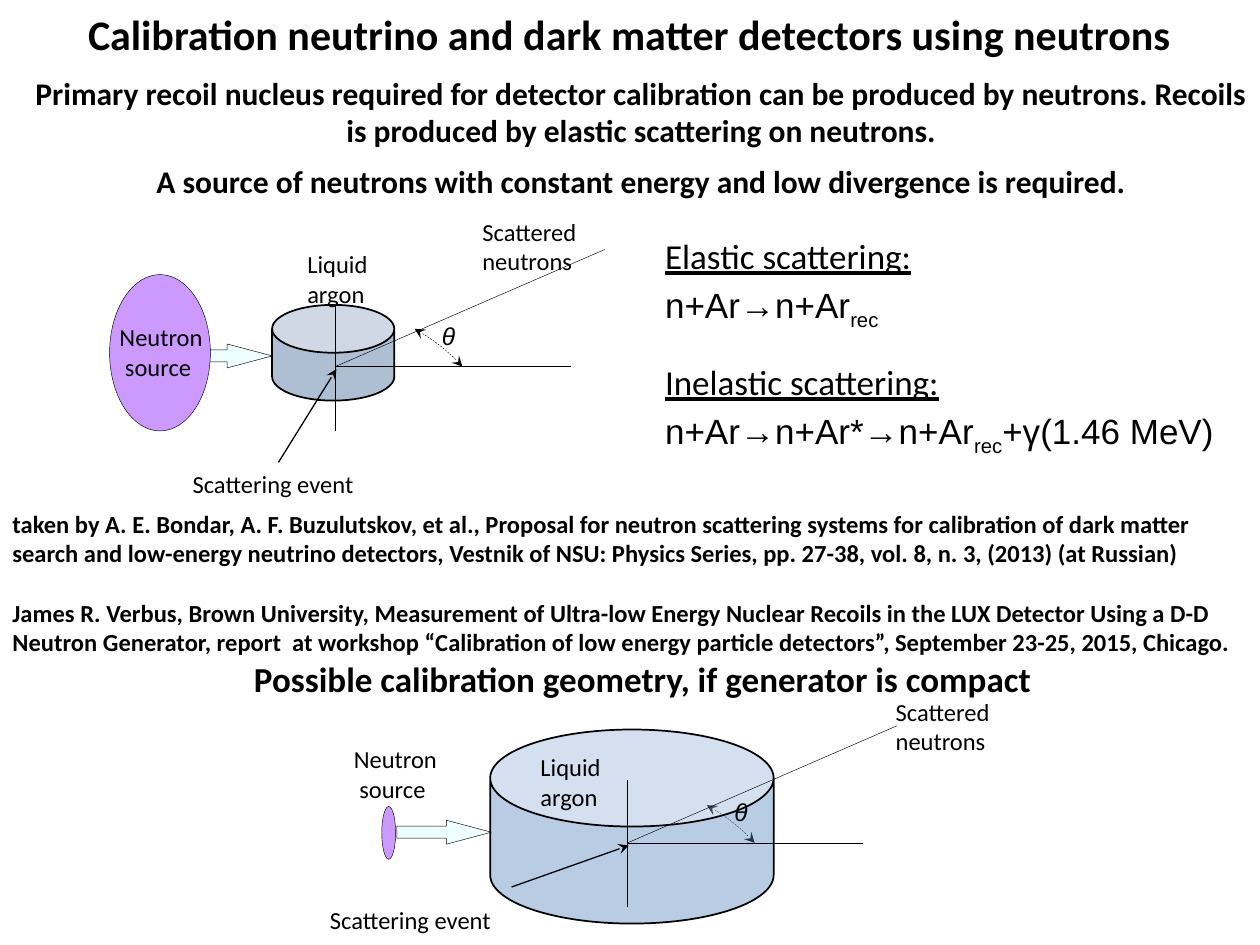
"""Build the slide on calibrating neutrino and dark matter detectors with neutrons."""
from dataclasses import dataclass

import pptx
import pptx.dml.color
import pptx.enum.dml
import pptx.enum.shapes
import pptx.enum.text
import pptx.oxml
import pptx.oxml.ns
import pptx.util

Inches = pptx.util.Inches
Pt = pptx.util.Pt
Shapes = pptx.enum.shapes.MSO_SHAPE
Align = pptx.enum.text.PP_ALIGN
Anchor = pptx.enum.text.MSO_ANCHOR
Rect = tuple[float, float, float, float]
Point = tuple[float, float]


@dataclass
class Span:
    text: str
    size: float = 14
    font: str = "Calibri"
    bold: bool = False
    italic: bool = False
    underline: bool = False
    subscript: bool = False


@dataclass
class Para:
    spans: list[Span]
    before: float = 0
    align: Align = Align.LEFT


@dataclass
class Label:
    lines: tuple[str, ...]
    rect: Rect


@dataclass
class Setup:
    can: Rect
    can_color: str
    beam: Rect
    source: Rect
    event: Point
    pointer_start: Point
    labels: list[Label]


SETUPS = [
    Setup((2.16, 2.42, 0.97, 0.76), "376092", (0.97, 2.73, 1.19, 0.19),
          (0.87, 2.18, 0.8, 1.24), (2.66, 2.91), (2.21, 3.67),
          [Label(("Neutron", " source"), (0.85, 2.51, 0.86, 0.54)),
           Label(("Liquid", "argon"), (2.34, 1.93, 0.68, 0.54)),
           Label(("Scattering event",), (1.43, 3.67, 1.49, 0.32)),
           Label(("Scattered", "neutrons"), (3.73, 1.67, 0.95, 0.54))]),
    Setup((3.89, 5.79, 2.25, 1.54), "4F81BD", (3.15, 6.51, 0.75, 0.19),
          (3.03, 6.4, 0.11, 0.42), (4.98, 6.69), (4.06, 7.04),
          [Label(("Neutron", " source"), (2.71, 5.86, 0.87, 0.57)),
           Label(("Liquid", "argon"), (4.19, 5.92, 0.69, 0.57)),
           Label(("Scattering event",), (2.52, 7.13, 1.49, 0.32)),
           Label(("Scattered", "neutrons"), (7.01, 5.48, 0.95, 0.54))]),
]

CITATIONS = [
    "taken by A. E. Bondar, A. F. Buzulutskov, et al., Proposal for neutron scattering systems "
    "for calibration of dark matter search and low-energy neutrino detectors, Vestnik of NSU: "
    "Physics Series, pp. 27-38, vol. 8, n. 3, (2013) (at Russian)",
    "James R. Verbus, Brown University, Measurement of Ultra-low Energy Nuclear Recoils in the "
    "LUX Detector Using a D-D Neutron Generator, report  at workshop “Calibration of low energy "
    "particle detectors”, September 23-25, 2015, Chicago.",
]

REQUIREMENTS = [
    "Primary recoil nucleus required for detector calibration can be produced by neutrons. "
    "Recoils is produced by elastic scattering on neutrons.",
    "A source of neutrons with constant energy and low divergence is required.",
]


def color(code: str) -> pptx.dml.color.RGBColor:
    return pptx.dml.color.RGBColor.from_string(code)


def lengths(rect: Rect) -> list[pptx.util.Length]:
    return [Inches(value) for value in rect]


def add_text(page, rect: Rect, paras: list[Para], wrap: bool = True, anchor=Anchor.TOP) -> None:
    frame = page.shapes.add_textbox(*lengths(rect)).text_frame
    frame.word_wrap = wrap
    frame.auto_size = pptx.enum.text.MSO_AUTO_SIZE.SHAPE_TO_FIT_TEXT
    frame.vertical_anchor = anchor
    for index, para in enumerate(paras):
        paragraph = frame.add_paragraph() if index else frame.paragraphs[0]
        paragraph.alignment = para.align
        paragraph.space_before = Pt(para.before)
        for span in para.spans:
            run = paragraph.add_run()
            run.text = span.text
            font = run.font
            font.name, font.size = span.font, Pt(span.size)
            font.bold, font.italic, font.underline = span.bold, span.italic, span.underline
            font.color.rgb = color("000000")
            if span.subscript:
                run._r.get_or_add_rPr().set("baseline", "-25000")


def add_solid(page, kind, rect: Rect, fill: str, width: float, opacity: int = 100):
    shape = page.shapes.add_shape(kind, *lengths(rect))
    shape.shadow.inherit = False
    shape.fill.solid()
    shape.fill.fore_color.rgb = color(fill)
    if opacity < 100:
        choice = shape._element.spPr.find(pptx.oxml.ns.qn("a:solidFill"))[0]
        choice.append(pptx.oxml.parse_xml(
            f'<a:alpha {pptx.oxml.ns.nsdecls("a")} val="{opacity * 1000}"/>'))
    set_line(shape, width)
    return shape


def set_line(shape, width: float, heads: tuple[str, ...] = ()) -> None:
    shape.line.color.rgb = color("000000")
    shape.line.width = Pt(width)
    for head in heads:
        shape.line._get_or_add_ln().append(pptx.oxml.parse_xml(
            f'<a:{head} {pptx.oxml.ns.nsdecls("a")} type="stealth"/>'))


def add_line(page, start: Point, end: Point, width: float = 0.25, heads: tuple[str, ...] = ()) -> None:
    line = page.shapes.add_connector(
        pptx.enum.shapes.MSO_CONNECTOR.STRAIGHT, *lengths(start + end))
    set_line(line, width, heads)
    line._element.spPr.append(pptx.oxml.parse_xml(f'<a:effectLst {pptx.oxml.ns.nsdecls("a")}/>'))


def add_angle_arc(page, event: Point) -> None:
    controls = [(1.01, 0), (0.91, -0.11), (0.79, -0.21), (0.63, -0.3)]
    points = []
    for step in range(13):
        t = step / 12
        weights = [(1 - t) ** 3, 3 * t * (1 - t) ** 2, 3 * t * t * (1 - t), t ** 3]
        points.append(tuple(
            Inches(event[axis] + sum(w * c[axis] for w, c in zip(weights, controls)))
            for axis in (0, 1)))
    builder = page.shapes.build_freeform(*points[0])
    builder.add_line_segments(points[1:], close=False)
    arc = builder.convert_to_shape()
    arc.shadow.inherit = False
    arc.fill.background()
    arc.line.dash_style = pptx.enum.dml.MSO_LINE.DASH
    set_line(arc, 0.25, ("headEnd", "tailEnd"))


def add_setup(page, setup: Setup) -> None:
    x, y = setup.event
    add_angle_arc(page, setup.event)
    can = add_solid(page, Shapes.CAN, setup.can, setup.can_color, 1, 40)
    can.adjustments[0] = 0.5
    beam = add_solid(page, Shapes.RIGHT_ARROW, setup.beam, "CCFFFF", 0.25, 30)
    beam.adjustments[0], beam.adjustments[1] = 0.5, 1.88
    add_solid(page, Shapes.OVAL, setup.source, "CC99FF", 0.25)
    add_line(page, (x, y + 0.51), (x, y - 0.5))
    add_line(page, (x, y), (x + 2.14, y - 0.93))
    add_line(page, (x, y), (x + 1.87, y))
    add_line(page, setup.pointer_start, (x + 0.01, y + 0.02), 0.75, ("tailEnd",))
    add_text(page, (x + 0.75, y - 0.41, 0.3, 0.32),
             [Para([Span("θ", font="Arial", italic=True)])], wrap=False)
    for label in setup.labels:
        add_text(page, label.rect, [Para([Span(line)]) for line in label.lines], wrap=False)


def add_reaction(page, rect: Rect, title: str, formula: list[Span]) -> None:
    heading = Para([Span(title, 20, underline=True)], before=4)
    add_text(page, rect, [heading, Para(formula, before=4)], anchor=Anchor.MIDDLE)


def add_heading(page, rect: Rect, text: str, size: float) -> None:
    add_text(page, rect, [Para([Span(text, size, bold=True)], align=Align.CENTER)])


def main() -> None:
    deck = pptx.Presentation()
    deck.slide_width, deck.slide_height = Inches(10), Inches(7.5)
    page = deck.slides.add_slide(deck.slide_layouts[6])
    add_heading(page, (-0.01, 0.02, 10.01, 0.5),
                "Calibration neutrino and dark matter detectors using neutrons", 24)
    add_text(page, (0.09, 0.52, 10, 1.13),
             [Para([Span(text, 18, bold=True)], 7.2, Align.CENTER) for text in REQUIREMENTS],
             anchor=Anchor.MIDDLE)
    recoil = Span("rec", 20, "Arial", subscript=True)
    add_reaction(page, (5.18, 1.83, 4.82, 0.83), "Elastic scattering:",
                 [Span("n+Ar→n+Ar", 20, "Arial"), recoil])
    add_reaction(page, (5.18, 2.83, 4.88, 0.83), "Inelastic scattering:",
                 [Span("n+Ar→n+Ar*→n+Ar", 20, "Arial"), recoil,
                  Span("+γ(1.46 MeV)", 20, "Arial")])
    add_text(page, (0, 3.99, 10.02, 1.75),
             [Para([Span(text, bold=True)], before=17 * index)
              for index, text in enumerate(CITATIONS)])
    add_heading(page, (1.28, 5.17, 7.64, 0.44),
                "Possible calibration geometry, if generator is compact", 20)
    for setup in SETUPS:
        add_setup(page, setup)
    deck.save("out.pptx")


if __name__ == "__main__":
    main()
